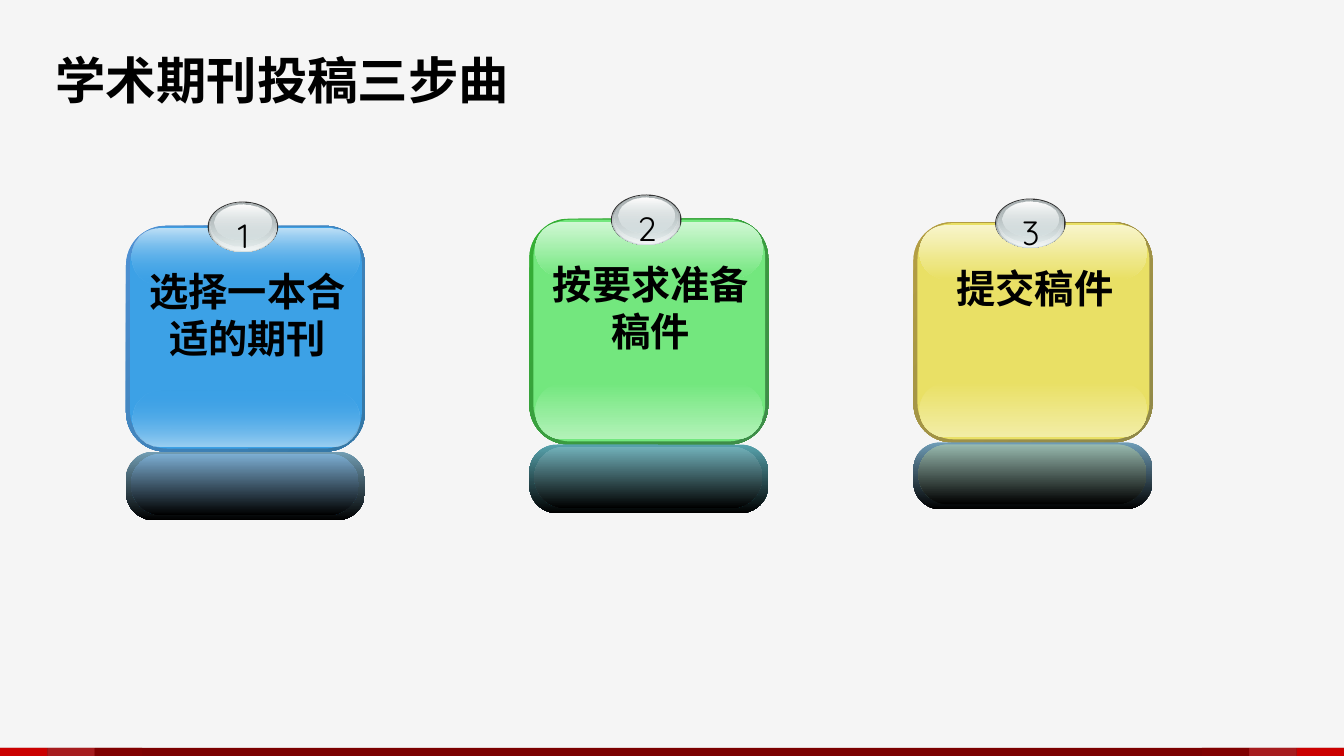
import pptx
import pptx.util
import pptx.dml.color
import pptx.enum.shapes
import pptx.enum.text
import pptx.oxml.ns
from lxml import etree

Inches = pptx.util.Inches
SHAPES = pptx.enum.shapes.MSO_SHAPE
ALIGN = pptx.enum.text.PP_ALIGN
TOP = pptx.enum.text.MSO_ANCHOR.TOP

# Content
TITLE = "学术期刊投稿三步曲"
COLORS = {"page": "F5F5F5", "text": "000000", "bar": "7B0000", "rim": "333333",
          "steel": "636869", "silver": "D6E1E2", "pale": "F1F5F5",
          "grey": "AAB2B3", "white": "FFFFFF", "black": "000000"}
BAR_ENDS = ["CB0000", "A61C1E", "800000"]

# Left and top of each card, height scale, and its own colours;
# fade is the opacity of a gloss where it meets the face
CARDS = [
    {"label": "选择一本合适的期刊", "left": 1.25, "top": 2.0, "scale": 1,
     "edge": ("4E91D4", "3477A4"), "face": "3CA1E6", "fade": 0,
     "low_gloss": "9BCFF2", "high_gloss": "BEE0F7",
     "mirror": "729EB4", "mirror_gloss": "7DAFD4"},
    {"label": "按要求准备稿件", "left": 5.25, "top": 1.93, "scale": 1,
     "edge": ("34B034", "3F8B4A"), "face": "73E77E", "fade": 100,
     "low_gloss": "B3F2B9", "high_gloss": "D0F7D4",
     "mirror": "58A4AE", "mirror_gloss": "72B2BB"},
    {"label": "提交稿件", "left": 9.06, "top": 1.97, "scale": 0.975,
     "edge": ("B59F43", "8F8849"), "face": "E9E065", "fade": 100,
     "low_gloss": "F2EDA6", "high_gloss": "F8F5CC",
     "mirror": "6F9DB7", "mirror_gloss": "98BAAF"},
]

# Number badge: left, top, width, height, first colour, last colour, opacities
BADGE = [
    (0.81, 0, 0.7, 0.5, "rim", "rim", 100, 100),
    (0.82, 0.01, 0.68, 0.49, "steel", "silver", 100, 100),
    (0.83, 0.01, 0.66, 0.48, "silver", "pale", 0, 100),
    (0.84, 0.01, 0.63, 0.44, "grey", "silver", 100, 48),
    (0.88, 0.03, 0.56, 0.36, "white", "silver", 100, 38),
]


def rgb(color):
    return pptx.dml.color.RGBColor.from_string(color)


def add_part(shapes, kind, place, first, last=None, opacity=(100, 100),
             angle=90, corner=None):
    """Add a borderless shape, solid or with a two-colour gradient."""
    shape = shapes.add_shape(kind, *[Inches(length) for length in place])
    shape.shadow.inherit = False
    shape.line.fill.background()
    if corner is not None:
        shape.adjustments[0] = corner
    if last is None or last == first:
        shape.fill.solid()
        shape.fill.fore_color.rgb = rgb(first)
        return
    shape.fill.gradient()
    shape.fill.gradient_angle = 360 - angle
    for stop, color in zip(shape.fill.gradient_stops, (first, last)):
        stop.color.rgb = rgb(color)
    nodes = shape._element.spPr.iter(pptx.oxml.ns.qn("a:srgbClr"))
    for node, percent in zip(list(nodes), opacity):
        if percent < 100:
            alpha = etree.SubElement(node, pptx.oxml.ns.qn("a:alpha"))
            alpha.set("val", str(percent * 1000))


def write(box, text, size, font, bold=False, align=ALIGN.LEFT, wrap=True, spacing=None):
    frame = box.text_frame
    frame.word_wrap = wrap
    frame.vertical_anchor = TOP
    para = frame.paragraphs[0]
    para.alignment = align
    if spacing:
        para.line_spacing = spacing
    span = para.add_run()
    span.text = text
    span.font.size = pptx.util.Pt(size)
    span.font.name = font
    span.font.bold = bold
    span.font.color.rgb = rgb(COLORS["text"])


def add_card(page, number, card):
    shapes = page.shapes.add_group_shape().shapes
    left, top, scale, face = card["left"], card["top"], card["scale"], card["face"]
    fade = card["fade"]

    def place(x, y, width, height):
        return left + x, top + y * scale, width, height * scale

    # Glossy face and its reflection
    panels = [
        ((0, 0.24, 2.37, 2.24), *card["edge"], (100, 100), 45, 0.175),
        ((0.04, 0.25, 2.3, 2.2), face, None, (100, 100), 90, 0.167),
        ((0.06, 1.87, 2.26, 0.56), face, card["low_gloss"], (fade, 100), 90, 0.5),
        ((0.06, 0.27, 2.26, 0.55), card["high_gloss"], face, (100, fade), 90, 0.5),
        ((0, 2.48, 2.37, 0.68), card["mirror"], COLORS["black"], (100, 100), 90, 0.404),
        ((0.05, 2.5, 2.26, 0.61), card["mirror_gloss"], COLORS["black"],
         (100, 100), 90, 0.5),
    ]
    for spot, first, last, opacity, angle, corner in panels:
        add_part(shapes, SHAPES.ROUNDED_RECTANGLE, place(*spot), first, last,
                 opacity, angle, corner)

    # Number badge
    for x, y, width, height, first, last, start, end in BADGE:
        add_part(shapes, SHAPES.OVAL, place(x, y, width, height),
                 COLORS[first], COLORS[last], (start, end))
    box = shapes.add_textbox(Inches(left + 0.97), Inches(top + 0.08),
                             Inches(0.39), Inches(0.5))
    write(box, str(number), 24, "Quicksand", align=ALIGN.CENTER, wrap=False)

    # Label
    box = shapes.add_textbox(Inches(left + 0.08), Inches(top + 0.6),
                             Inches(2.25), Inches(1.03))
    write(box, card["label"], 28, "DejaVu Sans", bold=True, align=ALIGN.CENTER)


def main():
    deck = pptx.Presentation()
    deck.slide_width, deck.slide_height = Inches(13.33), Inches(7.5)
    page = deck.slides.add_slide(deck.slide_layouts[5])
    page.background.fill.solid()
    page.background.fill.fore_color.rgb = rgb(COLORS["page"])

    # Bottom bar, its ends mirrored
    bar = page.shapes.add_group_shape().shapes
    add_part(bar, SHAPES.RECTANGLE, (0, 7.42, 13.33, 0.08), COLORS["bar"])
    width = 0.47
    for index, color in enumerate(BAR_ENDS):
        for x in (index * width, 13.33 - (index + 1) * width):
            add_part(bar, SHAPES.RECTANGLE, (x, 7.42, width, 0.08), color)

    # Title
    title = page.shapes.title
    title.left, title.top = Inches(0.45), Inches(0.51)
    title.width, title.height = Inches(8.56), Inches(0.9)
    write(title, TITLE, 36, "Quicksand", bold=True, spacing=0.9)

    # Steps
    for number, card in enumerate(CARDS, start=1):
        add_card(page, number, card)

    deck.save("out.pptx")


if __name__ == "__main__":
    main()
